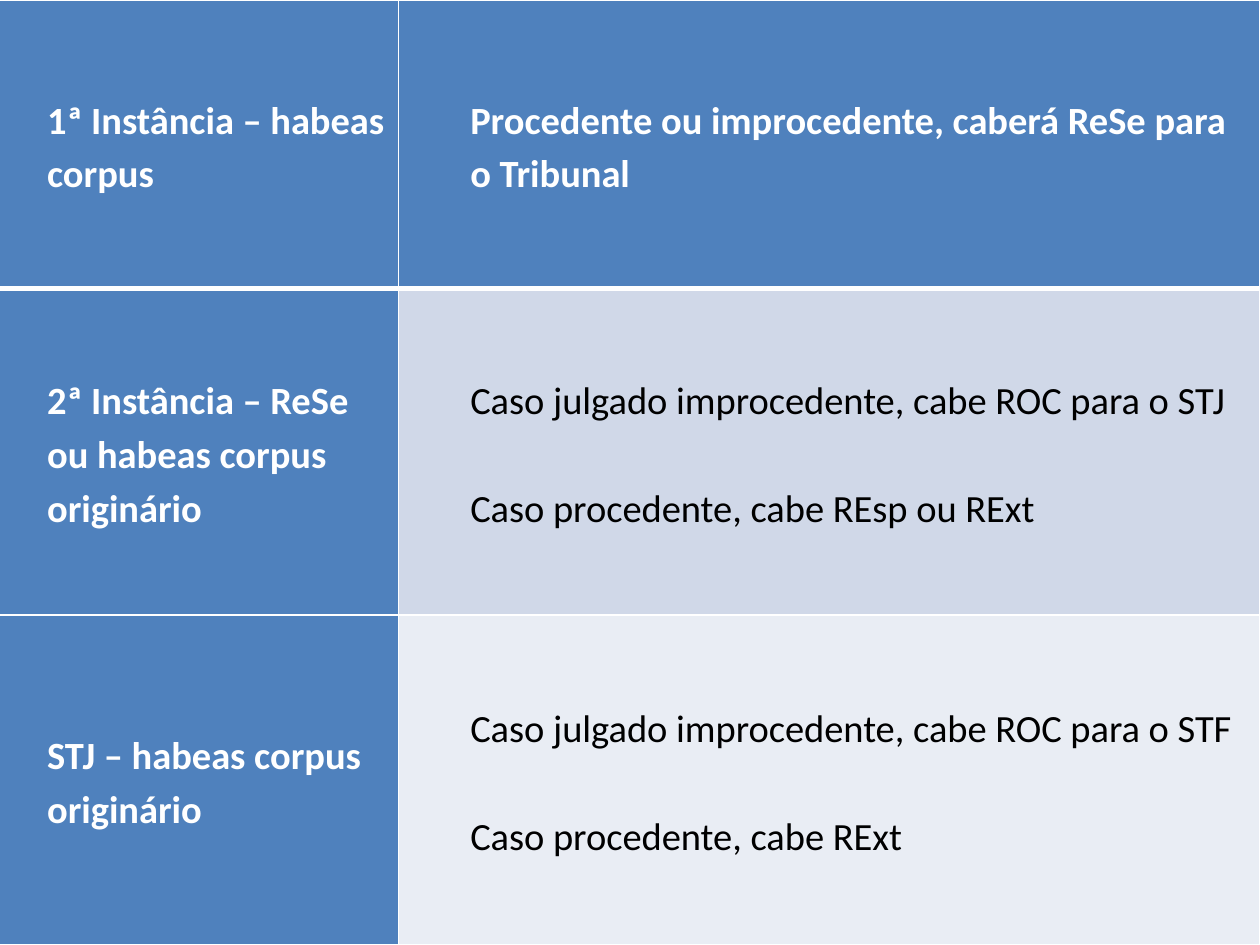
from lxml.etree import SubElement
from pptx import Presentation
from pptx.dml.color import RGBColor
from pptx.enum.text import MSO_ANCHOR
from pptx.oxml.ns import qn
from pptx.util import Cm, Pt

WHITE = RGBColor(0xFF, 0xFF, 0xFF)
BLACK = RGBColor(0x00, 0x00, 0x00)
BLUE = RGBColor(0x4F, 0x81, 0xBD)
LIGHT_BLUE = RGBColor(0xD0, 0xD8, 0xE8)
PALE_BLUE = RGBColor(0xE9, 0xED, 0xF4)

# Each row: court, outcomes and the appeals they allow, fill of the appeals cell
ROWS = [
    ("1ª Instância – habeas corpus",
     ["Procedente ou improcedente, caberá ReSe para o Tribunal"], BLUE),
    ("2ª Instância – ReSe ou habeas corpus originário",
     ["Caso julgado improcedente, cabe ROC para o STJ",
      "Caso procedente, cabe REsp ou RExt"], LIGHT_BLUE),
    ("STJ – habeas corpus originário",
     ["Caso julgado improcedente, cabe ROC para o STF",
      "Caso procedente, cabe RExt"], PALE_BLUE),
]
COLUMN_WIDTHS = [Cm(8.53), Cm(17.37)]
ROW_HEIGHTS = [Cm(5.82), Cm(6.58), Cm(6.65)]
INDENT = Cm(1.27)
OUTCOME_GAP = Pt(30.8)


def set_borders(cell, widths):
    """Draw white borders; widths maps a side tag (lnL, lnR, lnT, lnB) to points."""
    properties = cell._tc.get_or_add_tcPr()
    for side, width in widths.items():
        line = SubElement(properties, qn(f"a:{side}"), w=str(Pt(width)))
        fill = SubElement(line, qn("a:solidFill"))
        SubElement(fill, qn("a:srgbClr"), val=str(WHITE))


def fill_cell(cell, texts, fill_color, is_heading):
    cell.fill.solid()
    cell.fill.fore_color.rgb = fill_color
    cell.vertical_anchor = MSO_ANCHOR.MIDDLE
    cell.margin_left = cell.margin_right = Cm(0.18)
    cell.margin_top = cell.margin_bottom = 0
    cell.text_frame.text = "\n".join(texts)
    for position, paragraph in enumerate(cell.text_frame.paragraphs):
        paragraph.line_spacing = 1.15
        if position:
            paragraph.space_before = OUTCOME_GAP
        paragraph._p.get_or_add_pPr().set("marL", str(INDENT))
        font = paragraph.runs[0].font
        font.name = "Calibri"
        font.size = Pt(22)
        font.bold = is_heading
        font.color.rgb = WHITE if is_heading else BLACK


presentation = Presentation()
presentation.slide_width = Cm(25.4)
presentation.slide_height = Cm(19.05)
slide = presentation.slides.add_slide(presentation.slide_layouts[6])

table = slide.shapes.add_table(
    len(ROWS), len(COLUMN_WIDTHS), Cm(-0.5), 0,
    sum(COLUMN_WIDTHS), sum(ROW_HEIGHTS)).table
for column, width in zip(table.columns, COLUMN_WIDTHS):
    column.width = width
for row, height in zip(table.rows, ROW_HEIGHTS):
    row.height = height

for row_index, (court, appeals, appeals_fill) in enumerate(ROWS):
    is_header = row_index == 0
    borders = {"lnL": 1, "lnR": 1,
               "lnT": 3 if row_index == 1 else 1,
               "lnB": 3 if is_header else 1}
    contents = [([court], BLUE, True), (appeals, appeals_fill, is_header)]
    for column_index, content in enumerate(contents):
        cell = table.cell(row_index, column_index)
        set_borders(cell, borders)
        fill_cell(cell, *content)

presentation.save("out.pptx")
